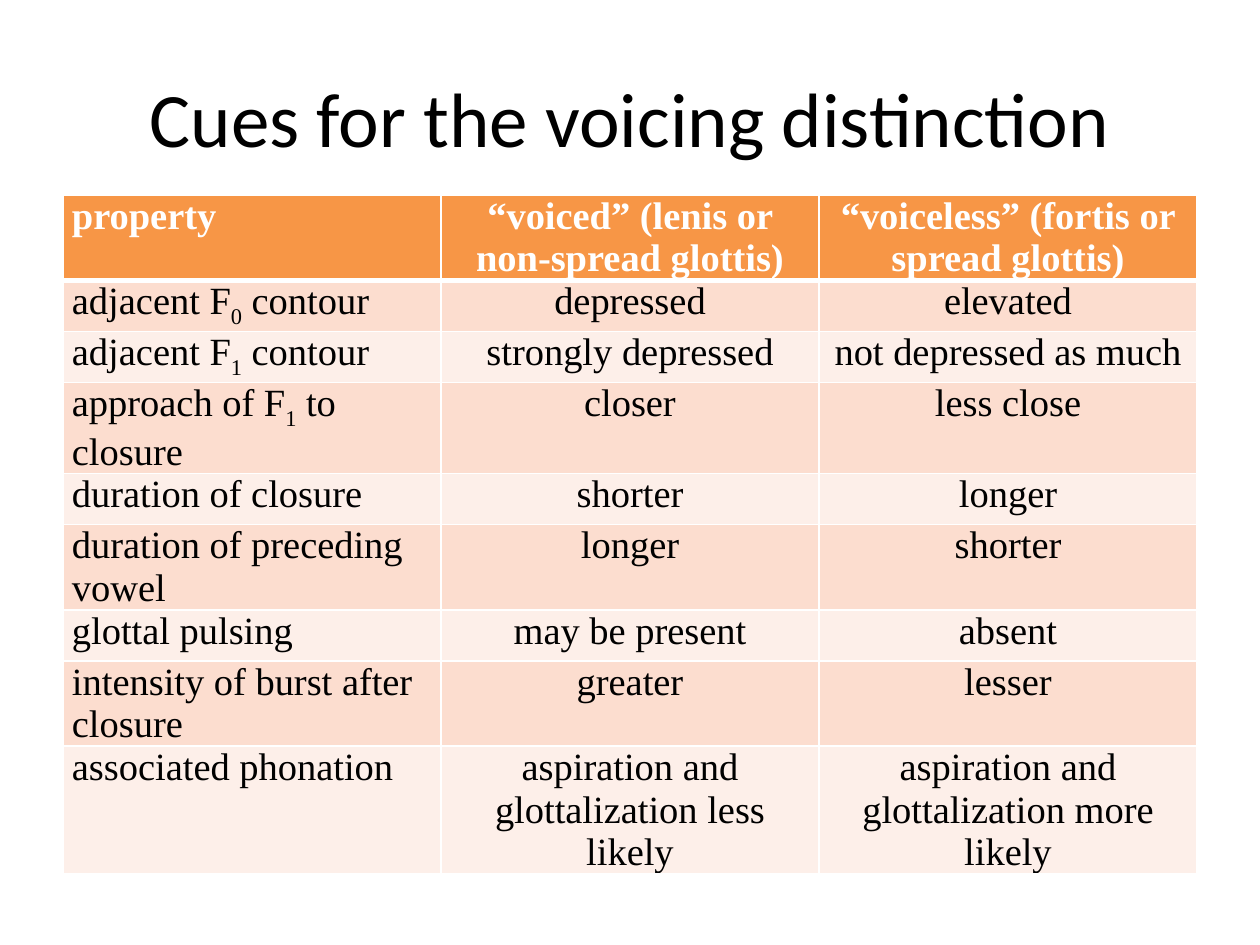
from lxml.etree import SubElement
from pptx import Presentation
from pptx.dml.color import RGBColor
from pptx.enum.text import MSO_ANCHOR as Anchor, PP_ALIGN as Align
from pptx.oxml.ns import qn
from pptx.util import Pt

PX = 914400 / 126
COLORS = {
    "text": "000000",
    "white": "FFFFFF",
    "header": "F79646",
    "odd": "FCDDCF",
    "even": "FDEFE9",
}
TITLE_FONT, TABLE_FONT = "Calibri", "Times New Roman"

# In a tuple, every second part is a subscript
HEADER = ("property", "“voiced” (lenis or non-spread glottis)",
          "“voiceless” (fortis or spread glottis)")
CUES = [
    (("adjacent F", "0", " contour"), "depressed", "elevated"),
    (("adjacent F", "1", " contour"), "strongly depressed", "not depressed as much"),
    (("approach of F", "1", " to closure"), "closer", "less close"),
    ("duration of closure", "shorter", "longer"),
    ("duration of preceding vowel", "longer", "shorter"),
    ("glottal pulsing", "may be present", "absent"),
    ("intensity of burst after closure", "greater", "lesser"),
    ("associated phonation", "aspiration and glottalization less likely",
     "aspiration and glottalization more likely"),
]


def px(length):
    return round(length * PX)


def rgb(name):
    return RGBColor.from_string(COLORS[name])


class SlideBuilder:
    def __init__(self, page):
        self.page = page

    def add_text(self, para, parts, font, size, color, align, bold=False):
        para.alignment = align
        for index, text in enumerate((parts,) if isinstance(parts, str) else parts):
            span = para.add_run()
            span.text = text
            span.font.name = font
            span.font.size = Pt(size)
            span.font.bold = bold
            span.font.color.rgb = rgb(color)
            if index % 2:
                span.font._element.set("baseline", "-25000")

    def title(self, text, left, top, width, height):
        box = self.page.shapes.title
        box.left, box.top, box.width, box.height = map(px, (left, top, width, height))
        frame = box.text_frame
        frame.word_wrap = True
        frame.vertical_anchor = Anchor.MIDDLE
        self.add_text(frame.paragraphs[0], text, TITLE_FONT, 44, "text", Align.CENTER)

    def borders(self, cell, top, bottom):
        props = cell._tc.get_or_add_tcPr()
        for side, points in (("L", 1), ("R", 1), ("T", top), ("B", bottom)):
            line = SubElement(props, qn(f"a:ln{side}"), w=str(Pt(points)))
            fill = SubElement(line, qn("a:solidFill"))
            SubElement(fill, qn("a:srgbClr"), val=COLORS["white"])

    def cell(self, cell, parts, row, column):
        is_header = row == 0
        cell.margin_left = cell.margin_right = px(9)
        cell.margin_top = cell.margin_bottom = 0
        cell.vertical_anchor = Anchor.TOP
        self.borders(cell, 3 if row == 1 else 1, 3 if is_header else 1)
        cell.fill.solid()
        cell.fill.fore_color.rgb = rgb(
            "header" if is_header else "odd" if row % 2 else "even")
        self.add_text(cell.text_frame.paragraphs[0], parts, TABLE_FONT, 22,
                      "white" if is_header else "text",
                      Align.CENTER if column else Align.LEFT, is_header)

    def table(self, rows, left, top, width, row_height):
        columns = len(rows[0])
        table = self.page.shapes.add_table(
            len(rows), columns, px(left), px(top), px(width),
            px(row_height * len(rows))).table
        table.first_row = table.horz_banding = False
        for column in table.columns:
            column.width = px(width / columns)
        for r, values in enumerate(rows):
            table.rows[r].height = px(row_height)
            for c, parts in enumerate(values):
                self.cell(table.cell(r, c), parts, r, c)


def main():
    deck = Presentation()
    deck.slide_width, deck.slide_height = px(1260), px(945)
    builder = SlideBuilder(deck.slides.add_slide(deck.slide_layouts[5]))

    # Heading
    builder.title("Cues for the voicing distinction", 63, 38, 1134, 158)

    # Comparison table: rows grow where their text wraps
    builder.table([HEADER, *CUES], 63, 195, 1134, 51)

    deck.save("out.pptx")


if __name__ == "__main__":
    main()
